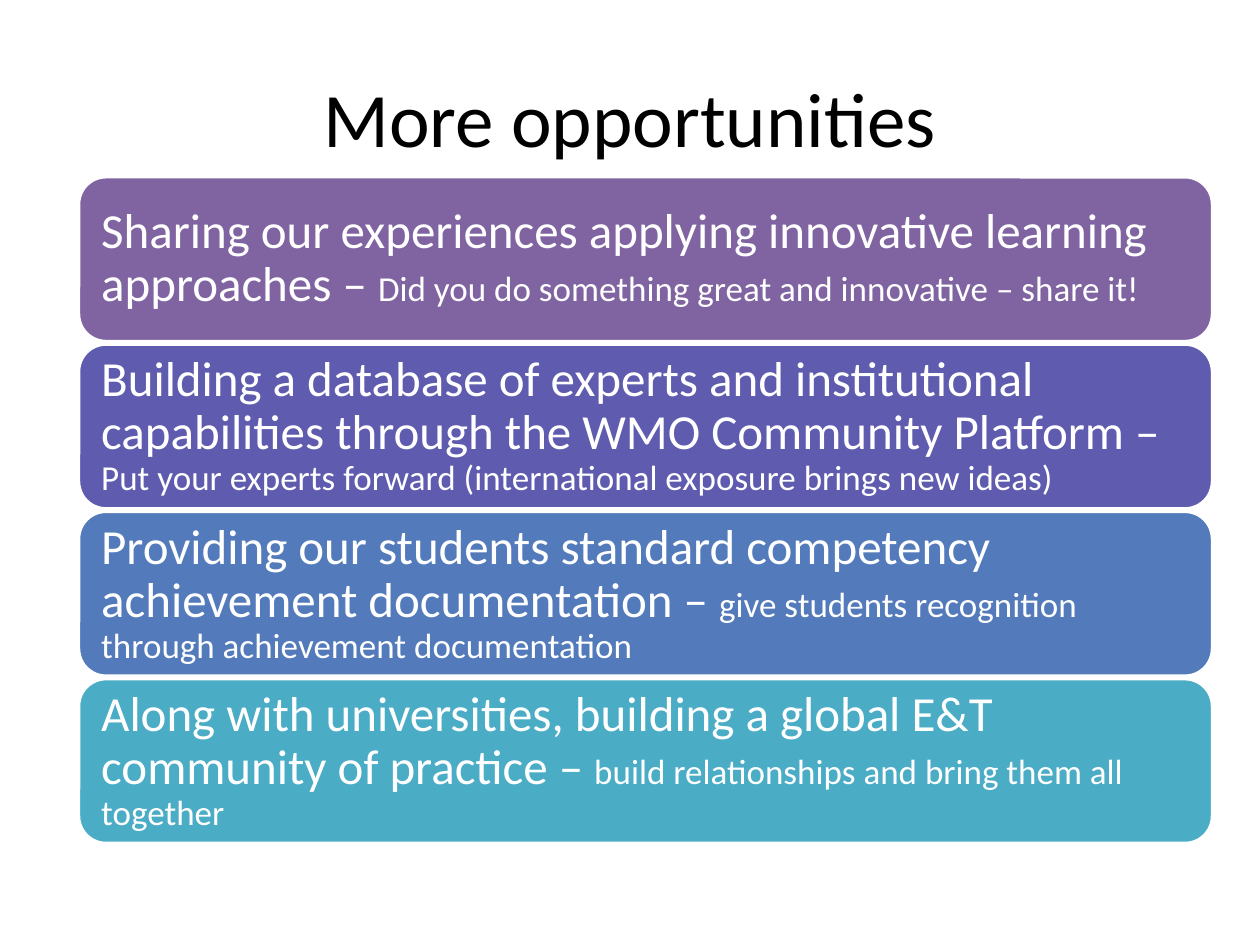
from pptx import Presentation
from pptx.dml.color import RGBColor
from pptx.enum.shapes import MSO_SHAPE
from pptx.enum.text import MSO_ANCHOR, PP_ALIGN
from pptx.util import Pt

ROUNDED = MSO_SHAPE.ROUNDED_RECTANGLE
MIDDLE = MSO_ANCHOR.MIDDLE
LEFT, CENTER = PP_ALIGN.LEFT, PP_ALIGN.CENTER

FONT = "Calibri"
WHITE, BLACK = "FFFFFF", "000000"
BAR_LEFT, BAR_TOP, BAR_WIDTH, BAR_HEIGHT = 44.9, 101, 648, 94.2
BAR_STEP = 95.6
BAR_INSET = 8.4

# Fill, opportunity, call to action
OPPORTUNITIES = [
    ("8064A2",
     "Sharing our experiences applying innovative learning approaches – ",
     "Did you do something great and innovative – share it!"),
    ("5F5BAE",
     "Building a database of experts and institutional capabilities "
     "through the WMO Community Platform –",
     " Put your experts forward (international exposure brings new ideas)"),
    ("537ABA",
     "Providing our students standard competency achievement documentation – ",
     "give students recognition through achievement documentation"),
    ("4BACC6",
     "Along with universities, building a global E&T community of practice – ",
     "build relationships and bring them all together"),
]


def color(hex_string):
    return RGBColor.from_string(hex_string)


def style_paragraph(paragraph, alignment, font_color):
    paragraph.alignment = alignment
    paragraph.font.name = FONT
    paragraph.font.color.rgb = color(font_color)


def add_title(slide, text):
    box = slide.shapes.add_textbox(Pt(36), Pt(21.6), Pt(648), Pt(90))
    frame = box.text_frame
    frame.word_wrap = True
    frame.vertical_anchor = MIDDLE
    paragraph = frame.paragraphs[0]
    paragraph.text = text
    style_paragraph(paragraph, CENTER, BLACK)
    paragraph.font.size = Pt(44)


def add_bar(slide, top, fill, opportunity, action):
    """Add a rounded bar with a large statement and a smaller call to action."""
    bar = slide.shapes.add_shape(
        ROUNDED, Pt(BAR_LEFT), Pt(top), Pt(BAR_WIDTH), Pt(BAR_HEIGHT))
    bar.shadow.inherit = False
    bar.fill.solid()
    bar.fill.fore_color.rgb = color(fill)
    bar.line.color.rgb = color(WHITE)
    bar.line.width = Pt(2)

    frame = bar.text_frame
    frame.word_wrap = True
    frame.vertical_anchor = MIDDLE
    frame.margin_left = frame.margin_right = Pt(BAR_INSET)
    frame.margin_top = frame.margin_bottom = Pt(BAR_INSET)
    paragraph = frame.paragraphs[0]
    style_paragraph(paragraph, LEFT, WHITE)
    paragraph.line_spacing = 0.9
    for text, size in ((opportunity, 28), (action, 20)):
        run = paragraph.add_run()
        run.text = text
        run.font.size = Pt(size)


def main():
    presentation = Presentation()
    presentation.slide_width = Pt(720)
    presentation.slide_height = Pt(540)
    slide = presentation.slides.add_slide(presentation.slide_layouts[6])
    add_title(slide, "More opportunities")
    for index, (fill, opportunity, action) in enumerate(OPPORTUNITIES):
        add_bar(slide, BAR_TOP + index * BAR_STEP, fill, opportunity, action)
    presentation.save("out.pptx")


if __name__ == "__main__":
    main()
